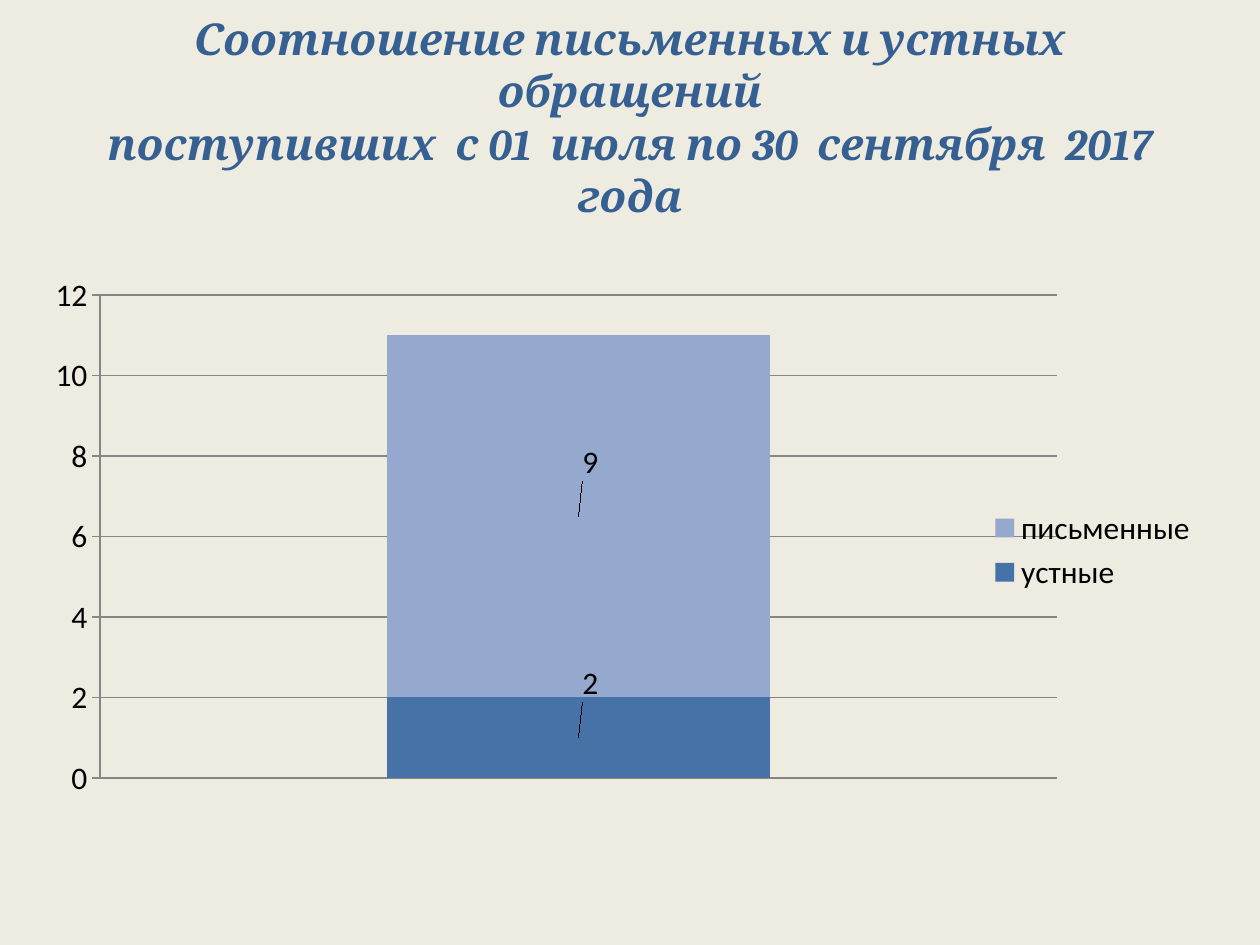
from pptx import Presentation
from pptx.chart.data import CategoryChartData
from pptx.dml.color import RGBColor
from pptx.enum.chart import XL_CHART_TYPE as ChartType, XL_LABEL_POSITION as LabelPosition
from pptx.enum.chart import XL_LEGEND_POSITION as LegendPosition, XL_TICK_MARK as TickMark
from pptx.enum.text import MSO_ANCHOR as Anchor, PP_ALIGN as Align
from pptx.oxml import parse_xml
from pptx.oxml.ns import nsdecls
from pptx.util import Inches, Pt

COLORS = {
    "background": "EEECE1",
    "title": "376092",
    "text": "000000",
    "grid": "868686",
    "oral": "4672A8",
    "written": "95A9CF",
}


def rgb(name):
    return RGBColor.from_string(COLORS[name])


def manual_layout(x, y, w=None, h=None):
    """Layout in fractions of the chart; without a size it is an offset."""
    tags = {"x": x, "y": y}
    if w is not None:
        tags = {"layoutTarget": "inner", "xMode": "edge", "yMode": "edge",
                **tags, "w": w, "h": h}
    body = "".join(f'<c:{tag} val="{value}"/>' for tag, value in tags.items())
    return parse_xml(f'<c:layout {nsdecls("c")}><c:manualLayout>{body}'
                     '</c:manualLayout></c:layout>')


class SlideBuilder:
    def __init__(self, deck):
        self.slide = deck.slides.add_slide(deck.slide_layouts[6])
        fill = self.slide.background.fill
        fill.solid()
        fill.fore_color.rgb = rgb("background")

    def title(self, lines, left, top, width, height):
        box = self.slide.shapes.add_textbox(
            Inches(left), Inches(top), Inches(width), Inches(height))
        frame = box.text_frame
        frame.word_wrap = True
        frame.vertical_anchor = Anchor.MIDDLE
        para = frame.paragraphs[0]
        para.alignment = Align.CENTER
        for index, line in enumerate(lines):
            if index:
                para.add_line_break()
            span = para.add_run()
            span.text = line
            font = span.font
            font.name, font.size = "Cambria", Pt(25)
            font.bold = font.italic = True
            font.color.rgb = rgb("title")

    def stacked_chart(self, rows, left, top, width, height):
        """Each row is a name, a value, a colour and a label offset."""
        data = CategoryChartData()
        data.categories = ["1"]
        for name, value, *_ in rows:
            data.add_series(name, [value])
        chart = self.slide.shapes.add_chart(
            ChartType.COLUMN_STACKED, Inches(left), Inches(top),
            Inches(width), Inches(height), data).chart
        chart.has_title = False
        chart.font.name, chart.font.size = "Calibri", Pt(18)
        chart.font.color.rgb = rgb("text")

        chart.has_legend = True
        chart.legend.position = LegendPosition.RIGHT
        chart.legend.include_in_layout = False

        chart.category_axis.visible = False
        axis = chart.value_axis
        axis.minimum_scale, axis.maximum_scale, axis.major_unit = 0, 12, 2
        axis.major_tick_mark = TickMark.OUTSIDE
        axis.has_major_gridlines = True
        for line in (axis.format.line, axis.major_gridlines.format.line):
            line.color.rgb = rgb("grid")
            line.width = Pt(0.75)

        plot = chart.plots[0]
        plot.gap_width, plot.overlap = 150, 100
        plot.vary_by_categories = False
        for series, (_, _, color, offset) in zip(plot.series, rows):
            series.format.fill.solid()
            series.format.fill.fore_color.rgb = rgb(color)
            series.data_labels.show_value = True
            series.points[0].data_label.position = LabelPosition.CENTER
            label = series._element.xpath("c:dLbls/c:dLbl")[0]
            label.insert(1, manual_layout(*offset))

        area = chart._chartSpace.xpath("c:chart/c:plotArea")[0]
        for old in area.xpath("c:layout"):
            area.remove(old)
        area.insert(0, manual_layout(0.06, 0.03, 0.81, 0.89))


def main():
    deck = Presentation()
    deck.slide_width, deck.slide_height = Inches(10), Inches(7.5)
    builder = SlideBuilder(deck)
    builder.title(
        ["Соотношение письменных и устных обращений",
         "поступивших  с 01  июля по 30  сентября  2017 года"],
        0.5, 0.3, 9, 1.25)
    builder.stacked_chart(
        [("устные", 2, "oral", (0.01, -0.1)),
         ("письменные", 9, "written", (0.01, -0.1))],
        0.23, 2.19, 9.38, 4.33)
    deck.save("out.pptx")


if __name__ == "__main__":
    main()
